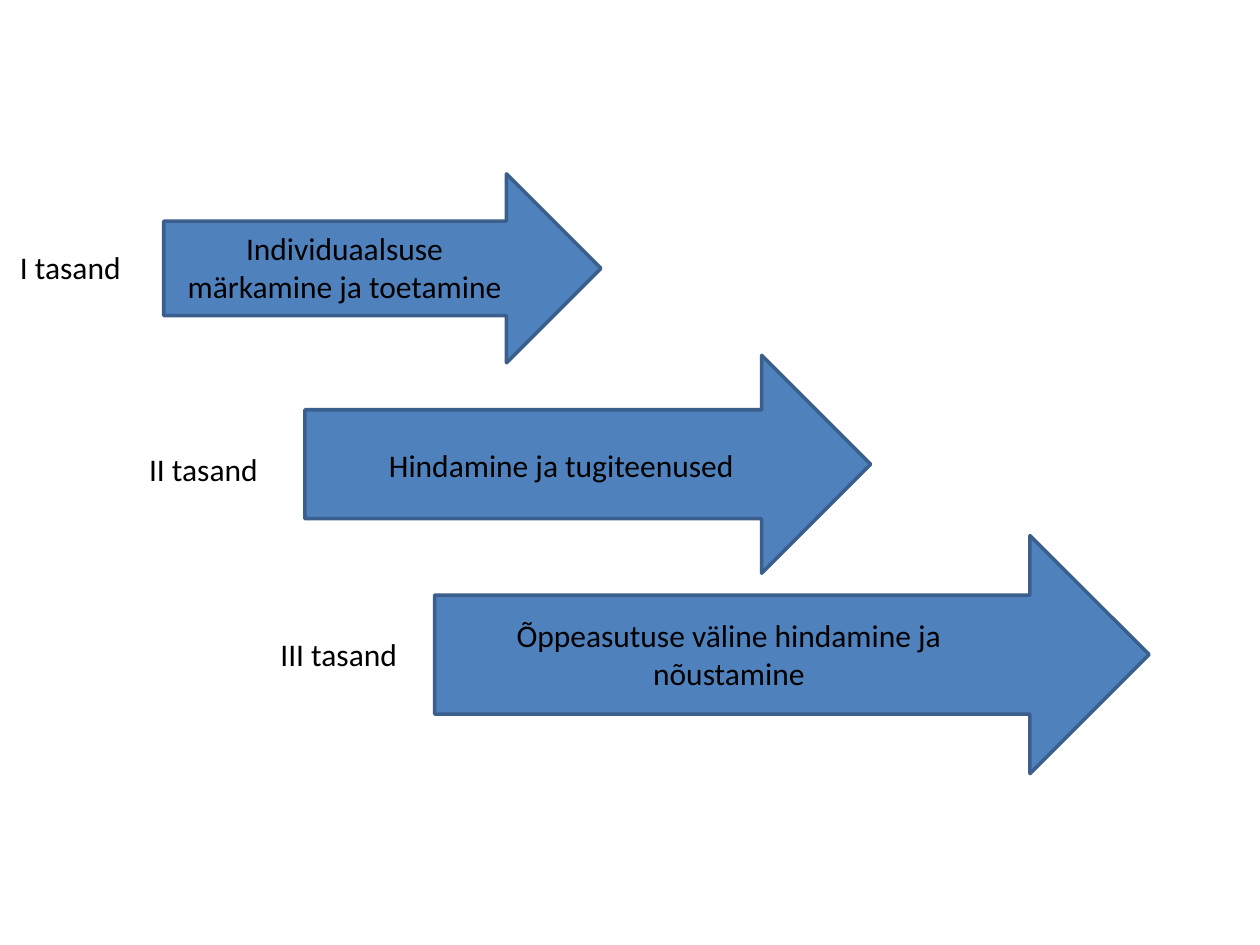
import pptx
import pptx.dml.color
import pptx.enum.shapes
import pptx.enum.text
import pptx.util

Inches = pptx.util.Inches
ALIGN = pptx.enum.text.PP_ALIGN

# Each level: arrow box, caption text and box, label text, box and alignment
LEVELS = [
    ((1.3, 1.38, 3.47, 1.5),
     "Individuaalsuse märkamine ja toetamine", (1.3, 1.77, 2.87, 0.71),
     "I tasand", (0.06, 1.92, 1.1, 0.4), ALIGN.LEFT),
    ((2.42, 2.82, 4.49, 1.73),
     "Hindamine ja tugiteenused", (2.63, 3.49, 3.65, 0.4),
     "II tasand", (0.8, 3.52, 1.63, 0.41), ALIGN.CENTER),
    ((3.45, 4.25, 5.67, 1.89),
     "Õppeasutuse väline hindamine ja nõustamine", (3.66, 4.84, 4.25, 0.71),
     "III tasand", (1.58, 4.99, 1.67, 0.4), ALIGN.RIGHT),
]


def color(hex_string):
    return pptx.dml.color.RGBColor.from_string(hex_string)


def add_text(slide, box, text, align=ALIGN.LEFT, size=18, font="Calibri",
             text_color="000000"):
    shape = slide.shapes.add_textbox(*map(Inches, box))
    frame = shape.text_frame
    frame.word_wrap = True
    frame.auto_size = pptx.enum.text.MSO_AUTO_SIZE.SHAPE_TO_FIT_TEXT
    paragraph = frame.paragraphs[0]
    paragraph.alignment = align
    run = paragraph.add_run()
    run.text = text
    run.font.size = pptx.util.Pt(size)
    run.font.name = font
    run.font.color.rgb = color(text_color)


def add_arrow(slide, box):
    shape = slide.shapes.add_shape(
        pptx.enum.shapes.MSO_SHAPE.RIGHT_ARROW, *map(Inches, box))
    shape.shadow.inherit = False
    shape.fill.solid()
    shape.fill.fore_color.rgb = color("4F81BD")
    shape.line.color.rgb = color("3A5F8C")
    shape.line.width = pptx.util.Pt(2)


def add_level(slide, arrow_box, caption, caption_box, label, label_box, label_align):
    add_arrow(slide, arrow_box)
    add_text(slide, caption_box, caption, align=ALIGN.CENTER)
    add_text(slide, label_box, label, align=label_align)


def main():
    presentation = pptx.Presentation()
    presentation.slide_width = Inches(10)
    presentation.slide_height = Inches(7.5)
    slide = presentation.slides.add_slide(presentation.slide_layouts[6])
    # Staircase of support levels
    for level in LEVELS:
        add_level(slide, *level)
    presentation.save("out.pptx")


if __name__ == "__main__":
    main()
